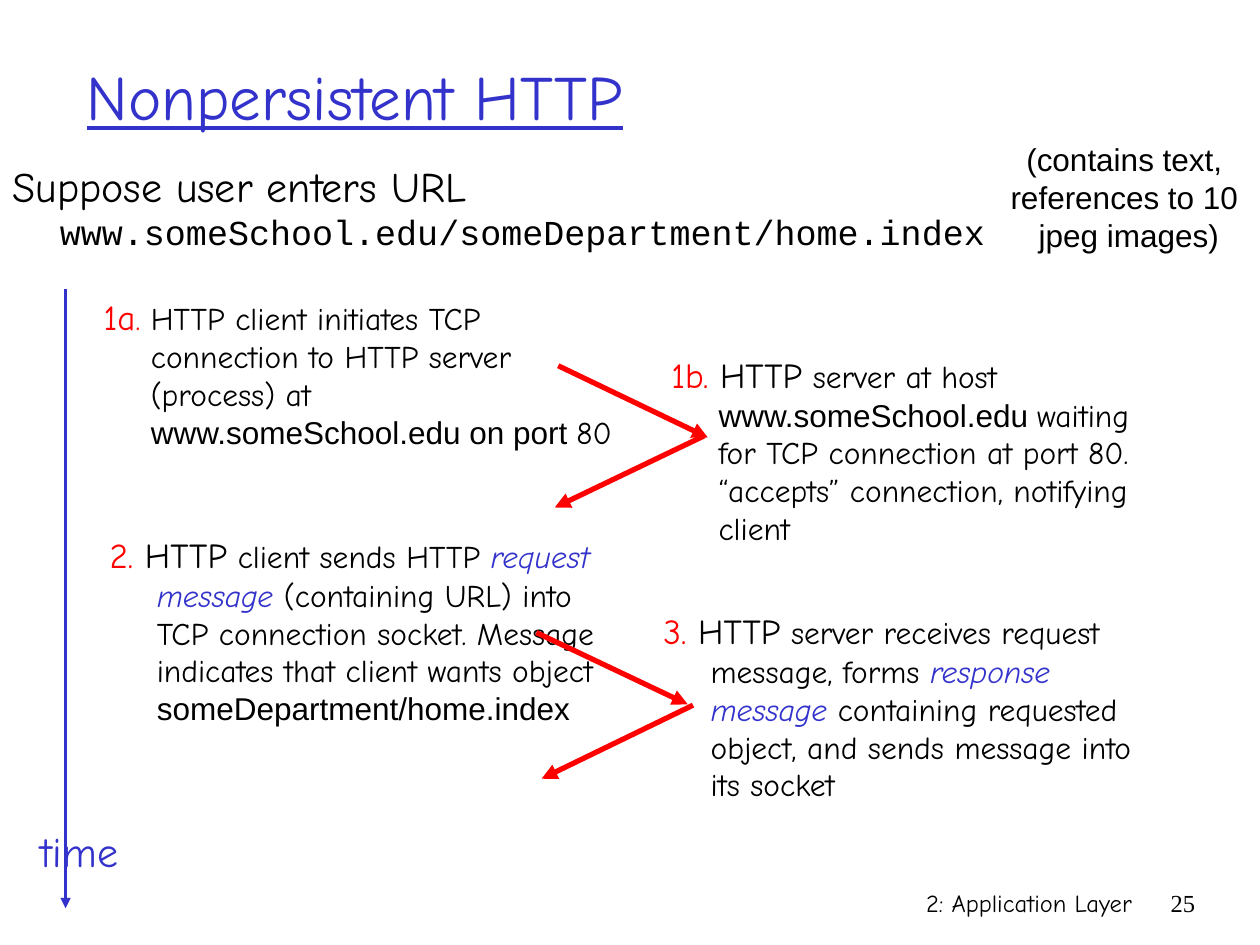
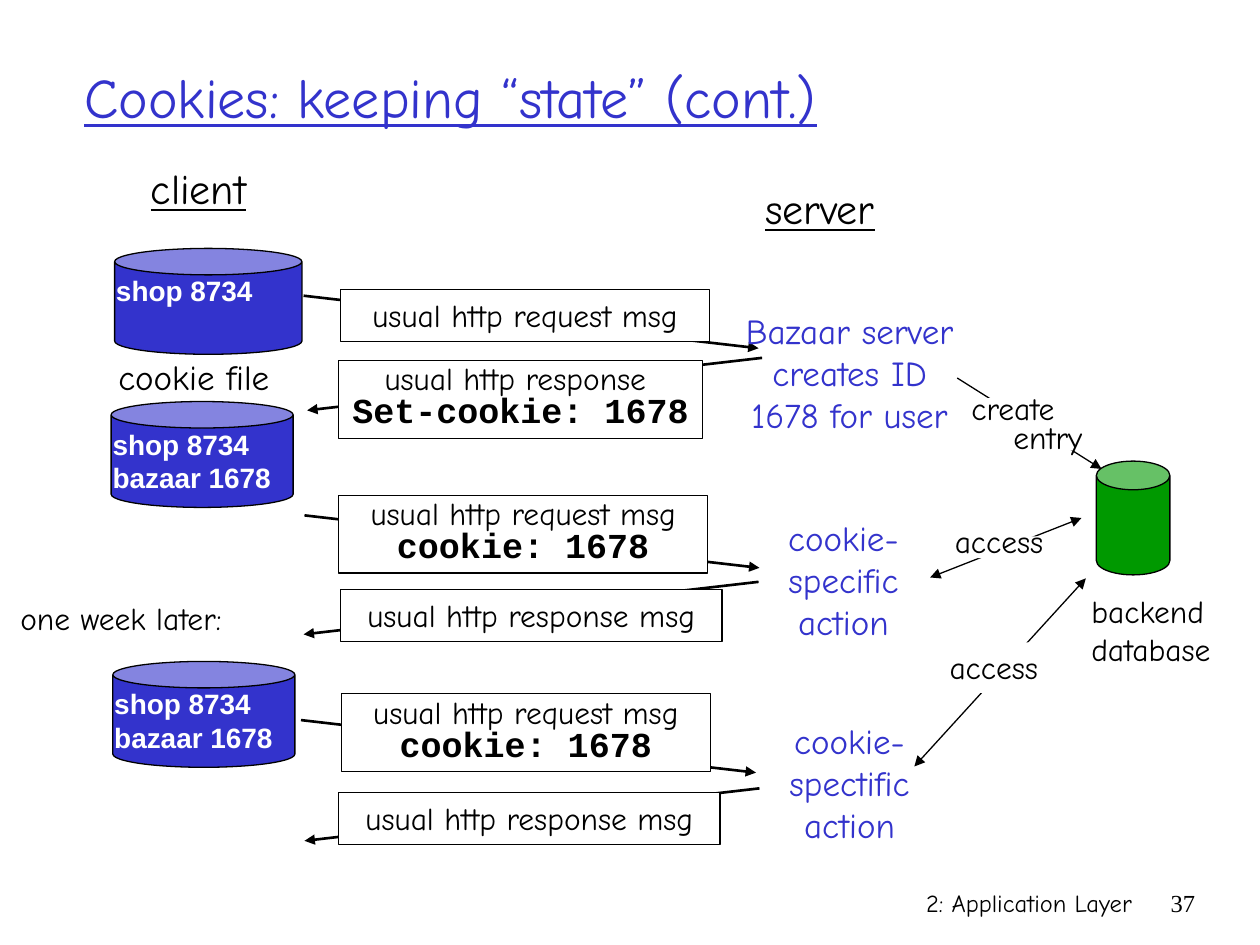
from dataclasses import dataclass

from pptx import Presentation
from pptx.dml.color import RGBColor
from pptx.enum.shapes import MSO_CONNECTOR, MSO_SHAPE
from pptx.enum.text import MSO_ANCHOR, MSO_AUTO_SIZE, PP_ALIGN
from pptx.oxml.ns import qn
from pptx.util import Pt

STRAIGHT = MSO_CONNECTOR.STRAIGHT
RECTANGLE, CAN = MSO_SHAPE.RECTANGLE, MSO_SHAPE.CAN
TOP, MIDDLE = MSO_ANCHOR.TOP, MSO_ANCHOR.MIDDLE
FIXED, GROW = MSO_AUTO_SIZE.NONE, MSO_AUTO_SIZE.SHAPE_TO_FIT_TEXT
LEFT, CENTER, RIGHT = PP_ALIGN.LEFT, PP_ALIGN.CENTER, PP_ALIGN.RIGHT

COMIC, ARIAL = "Comic Neue", "Arial"
COURIER, TIMES = "Courier New", "Times New Roman"
BLACK, WHITE, BLUE, RED, GREEN = "000000", "FFFFFF", "3333CC", "FF0000", "009900"
TWO_CONTENT, TITLE_ONLY = 3, 5
HANGING = 27


def rgb(code):
    """Turn a hex string into a colour."""
    return RGBColor.from_string(code)


@dataclass
class Run:
    """A piece of text with one format."""

    text: str
    size: float = 18
    color: str = BLACK
    font: str = COMIC
    bold: bool = False
    italic: bool = False
    underline: bool = False


class Deck:
    """Hold the shared style and the current slide."""

    def __init__(self):
        """Start an empty 10 by 7.5 inch deck."""
        self.prs = Presentation()
        self.prs.slide_width, self.prs.slide_height = Pt(720), Pt(540)
        self.slide = None

    def new_slide(self, layout, number, title, size, place):
        """Add a slide with its title and footer."""
        self.slide = self.prs.slides.add_slide(self.prs.slide_layouts[layout])
        heading = self.slide.shapes.title
        self.move(heading, place)
        self.fill_text(heading, [[Run(title, size, BLUE, underline=True)]], anchor=MIDDLE)
        self.text((426, 504, 228, 36), [[Run("2: Application Layer", 14)]], RIGHT)
        self.text((654, 504, 36, 36), [[Run(number, 14, font=TIMES)]], RIGHT)

    def move(self, shape, place):
        """Set the left, top, width and height of a shape."""
        shape.left, shape.top, shape.width, shape.height = map(Pt, place)

    def fill_text(self, shape, paragraphs, align=LEFT, anchor=TOP, wrap=True, spacing=None):
        """Fill a shape with paragraphs made of runs."""
        frame = shape.text_frame
        frame.word_wrap = wrap
        frame.auto_size = FIXED if wrap else GROW
        frame.vertical_anchor = anchor
        for index, runs in enumerate(paragraphs):
            paragraph = frame.paragraphs[0] if index == 0 else frame.add_paragraph()
            paragraph.alignment = align
            if spacing:
                paragraph.line_spacing = spacing
            for item in runs:
                run = paragraph.add_run()
                run.text = item.text
                font = run.font
                font.name, font.size = item.font, Pt(item.size)
                font.bold, font.italic = item.bold, item.italic
                font.underline = item.underline
                font.color.rgb = rgb(item.color)

    def indent(self, paragraph, margin, first=0):
        """Set the margin and first-line indent of a paragraph."""
        properties = paragraph._p.get_or_add_pPr()
        properties.set("marL", str(Pt(margin)))
        properties.set("indent", str(Pt(first)))
        return properties

    def text(self, place, paragraphs, align=LEFT, **options):
        """Add a text box."""
        box = self.slide.shapes.add_textbox(*map(Pt, place))
        self.fill_text(box, paragraphs, align, **options)
        return box

    def step(self, place, runs, body=None):
        """Set a hanging paragraph in a body placeholder or a text box."""
        if body is None:
            shape = self.text(place, [runs])
        else:
            shape = self.slide.placeholders[body]
            self.move(shape, place)
            self.fill_text(shape, [runs])
        paragraph = shape.text_frame.paragraphs[0]
        paragraph.space_before = Pt(4)
        properties = self.indent(paragraph, HANGING, -HANGING)
        properties.append(properties.makeelement(qn("a:buNone"), {}))

    def shape(self, kind, place, fill, outline=True):
        """Add a filled preset shape."""
        shape = self.slide.shapes.add_shape(kind, *map(Pt, place))
        shape.shadow.inherit = False
        shape.fill.solid()
        shape.fill.fore_color.rgb = rgb(fill)
        if outline:
            shape.line.color.rgb = rgb(BLACK)
            shape.line.width = Pt(0.75)
        else:
            shape.line.fill.background()
        return shape

    def arrow(self, start, end, color=BLACK, width=1.5, both=False):
        """Add a line with one or two arrowheads."""
        line = self.slide.shapes.add_connector(STRAIGHT, *map(Pt, start + end))
        line.line.color.rgb = rgb(color)
        line.line.width = Pt(width)
        properties = line._element.spPr
        outline = properties.find(qn("a:ln"))
        for tip in ("a:headEnd", "a:tailEnd") if both else ("a:tailEnd",):
            outline.append(outline.makeelement(qn(tip), {"type": "triangle"}))
        properties.append(properties.makeelement(qn("a:effectLst"), {}))

    def message(self, start, run_x, place, text, header=None):
        """Draw a message arrow spanning run_x with its label box on top."""
        self.arrow(start, (start[0] + run_x, start[1] + 30))
        lines = [[Run(text)]]
        if header:
            lines.append([Run(header, 20, font=COURIER, bold=True)])
        box = self.shape(RECTANGLE, place, WHITE)
        self.fill_text(box, lines, CENTER, spacing=0.8 if header else None)

    def cookie_file(self, place, entries):
        """Draw a cookie file as a can listing its entries."""
        self.shape(CAN, place, BLUE).adjustments[0] = 0.25
        left, top = place[:2]
        lines = [[Run(entry, 16, WHITE, ARIAL, bold=True)] for entry in entries]
        self.text((left - 6.3, top + 11, 126, 46), lines)

    def action(self, place, lines):
        """Show what the server does in centred blue lines."""
        self.text(place, [[Run(line, 20, BLUE)] for line in lines], CENTER, wrap=False)


def nonpersistent_http(deck):
    """Build the slide on the steps of a nonpersistent request."""
    deck.new_slide(TWO_CONTENT, "25", "Nonpersistent HTTP", 36, (42.5, 20, 612, 68.5))
    deck.arrow((37.5, 165), (37.5, 519), BLUE)
    deck.step((0, 88, 656.5, 36.5), [
        Run("Suppose user enters URL ", 24),
        Run("www.someSchool.edu/someDepartment/home.index", 20, font=COURIER),
    ], body=1)
    deck.step((52, 165, 310.5, 150), [
        Run("1a", 20, RED),
        Run(".", 18, RED),
        Run(" HTTP client initiates TCP connection to HTTP server (process) at "),
        Run("www.someSchool.edu on port ", font=ARIAL),
        Run("80"),
    ], body=2)
    deck.step((55.5, 301.5, 300, 85), [
        Run("2.", 20, RED),
        Run(" HTTP", 20),
        Run(" client sends HTTP "),
        Run("request message", color=BLUE, italic=True),
        Run(" (containing URL) into TCP connection socket. Message indicates "
            "that client wants object "),
        Run("someDepartment/home.index", font=ARIAL),
    ])
    deck.step((376.5, 198.5, 300, 119), [
        Run("1b.", 20, RED),
        Run(" HTTP", 20),
        Run(" server at host "),
        Run("www.someSchool.edu ", font=ARIAL),
        Run("waiting for TCP connection at port 80. “accepts” connection, "
            "notifying client"),
    ])
    deck.step((372, 345, 300, 142), [
        Run("3.", 20, RED),
        Run(" HTTP", 20),
        Run(" server receives request message, forms "),
        Run("response message", color=BLUE, italic=True),
        Run(" containing requested object, and sends message into its socket"),
    ])
    for start, end in (
        ((319, 209), (404.5, 250)),
        ((402.5, 249), (317, 290)),
        ((306.5, 361.5), (393, 402.5)),
        ((396, 403), (309.5, 445)),
    ):
        deck.arrow(start, end, RED, 3)
    deck.text((13.5, 468, 64, 36), [[Run("time", 24, BLUE)]], CENTER, wrap=False)
    remark = ("(contains text, ", "references to 10 ", "jpeg images)")
    deck.text((570, 76.5, 150, 72), [[Run(line, font=ARIAL)] for line in remark],
              CENTER, wrap=False)


def cookies(deck):
    """Build the slide on cookies exchanged by client and server."""
    deck.new_slide(TITLE_ONLY, "37", "Cookies: keeping “state” (cont.)", 32,
                   (41, 10, 612, 90))
    for place, side in (((75, 89.5, 77, 36), "client"), ((425, 101, 87, 36), "server")):
        deck.text(place, [[Run(side, 24, underline=True)]], CENTER, wrap=False)

    request, response = "usual http request msg", "usual http response msg"
    to_server, to_client = 260, -260
    for start, run_x, place, *words in (
        ((173.5, 169), to_server, (194.5, 165.5, 211, 29.5), request),
        ((435.5, 204.5), to_client, (193.5, 206, 208, 44.5),
         "usual http response ", "Set-cookie: 1678 "),
        ((174, 294.5), to_server, (193.5, 283, 211, 44.5), request, "cookie: 1678"),
        ((433.5, 332.5), to_client, (194.5, 337, 218, 29.5), response),
        ((172, 411.5), to_server, (195, 396.5, 211, 44.5), request, "cookie: 1678"),
        ((434, 450.5), to_client, (193.5, 453, 218, 29.5), response),
    ):
        deck.message(start, run_x, place, *words)

    first, second = "shop 8734", "bazaar 1678"
    deck.cookie_file((65.5, 142, 107, 60.5), [first])
    deck.cookie_file((63.5, 229.5, 104, 60.5), [first, second])
    deck.cookie_file((64.5, 378, 104, 60.5), [first, second])
    deck.text((60.5, 199.5, 140, 31), [[Run("cookie file", 20)]])
    deck.text((4.5, 339, 142.5, 29), [[Run("one week later:")]], wrap=False)

    deck.action((409, 173.5, 153, 79), ["Bazaar server", "creates ID", "1678 for user"])
    deck.action((438, 291.5, 88, 79), ["cookie-", "specific", "action"])
    deck.action((437, 407.5, 97, 79), ["cookie-", "spectific", "action"])

    deck.shape(CAN, (626.5, 263.5, 42, 65), GREEN).adjustments[0] = 0.39
    deck.arrow((547, 216), (629.5, 268), width=0.75)
    deck.shape(RECTANGLE, (558.5, 227.5, 75.5, 30), WHITE, outline=False)
    create = deck.text((548, 224, 92, 39.5), [[Run("create")], [Run("entry")]],
                       spacing=0.75)
    deck.indent(create.text_frame.paragraphs[1], 24)
    for start, end, mask, label in (
        ((531.5, 330), (618, 296), (551, 306.5, 48, 12.5), (538.5, 295, 70, 29)),
        ((522.5, 438), (620.5, 330.5), (535.5, 367, 70, 29), (535.5, 367, 70, 29)),
    ):
        deck.arrow(start, end, width=0.75, both=True)
        deck.shape(RECTANGLE, mask, WHITE, outline=False)
        deck.text(label, [[Run("access")]], wrap=False)
    deck.text((616.5, 335, 90.5, 50.5), [[Run("backend")], [Run("database")]], wrap=False)


def main():
    """Build both slides and save them."""
    deck = Deck()
    nonpersistent_http(deck)
    cookies(deck)
    deck.prs.save("out.pptx")


if __name__ == "__main__":
    main()
